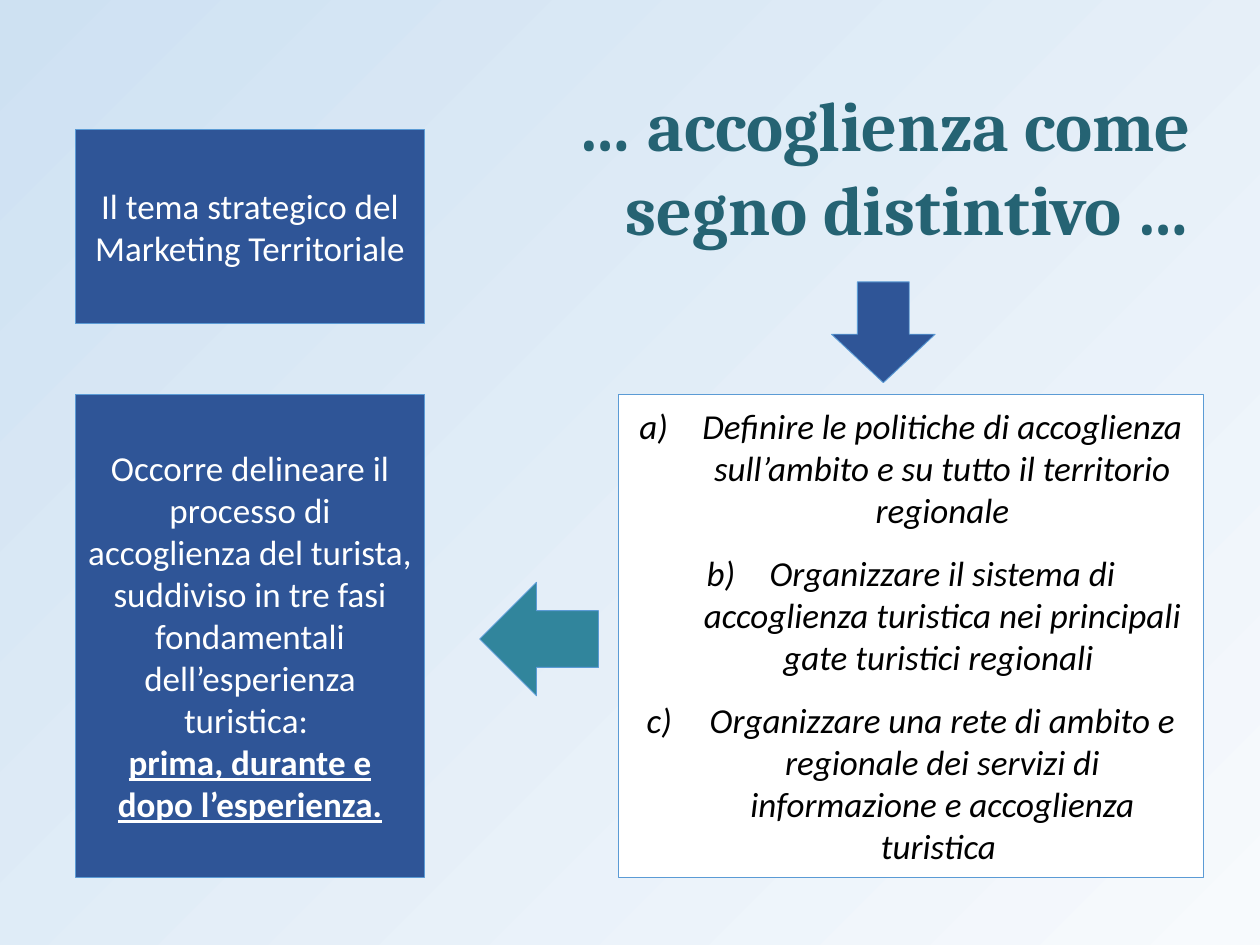
from lxml import etree
from pptx import Presentation
from pptx.dml.color import RGBColor
from pptx.enum.shapes import MSO_SHAPE
from pptx.enum.text import MSO_ANCHOR, PP_ALIGN
from pptx.oxml.ns import qn
from pptx.util import Pt

RECTANGLE = MSO_SHAPE.RECTANGLE
DOWN_ARROW = MSO_SHAPE.DOWN_ARROW
LEFT_ARROW = MSO_SHAPE.LEFT_ARROW
MIDDLE = MSO_ANCHOR.MIDDLE
CENTER = PP_ALIGN.CENTER
RIGHT = PP_ALIGN.RIGHT

COLORS = {
    "pale": "F7FAFD",
    "sky": "CEE1F2",
    "title": "256373",
    "blue": "2F5597",
    "teal": "31859C",
    "outline": "5B9BD5",
    "white": "FFFFFF",
    "black": "000000",
}

# Shared edges of the two columns and of the lower row
LEFT, LEFT_WIDTH = 43.2, 199.4
RIGHT_LEFT, RIGHT_WIDTH = 353.5, 334.1
ROW_TOP, ROW_HEIGHT = 225.4, 275.8
LIST_INDENT = 36

THEME = "Il tema strategico del Marketing Territoriale"
PROCESS = [
    "Occorre delineare il processo di accoglienza del turista, "
    "suddiviso in tre fasi fondamentali dell’esperienza turistica: ",
    "prima, durante e dopo l’esperienza.",
]
ACTIONS = [
    "Definire le politiche di accoglienza sull’ambito e su tutto il territorio regionale",
    "Organizzare il sistema di accoglienza turistica nei principali gate turistici regionali ",
    "Organizzare una rete di ambito e regionale dei servizi di informazione "
    "e accoglienza turistica ",
]


def color(name):
    return RGBColor.from_string(COLORS[name])


def set_background(slide):
    fill = slide.background.fill
    fill.gradient()
    fill.gradient_angle = 135
    for stop, name in zip(fill.gradient_stops, ("pale", "sky")):
        stop.color.rgb = color(name)


def write_text(shape, lines, size, font_name, color_name, alignment=CENTER):
    text_frame = shape.text_frame
    text_frame.word_wrap = True
    text_frame.vertical_anchor = MIDDLE
    text_frame.text = "\n".join(lines)
    for paragraph in text_frame.paragraphs:
        paragraph.alignment = alignment
        font = paragraph.runs[0].font
        font.size = Pt(size)
        font.name = font_name
        font.color.rgb = color(color_name)
    return text_frame.paragraphs


def add_title(slide, text):
    box = slide.shapes.add_textbox(Pt(286.6), Pt(19.4), Pt(401), Pt(149.8))
    paragraph = write_text(box, [text], 40, "Cambria", "title", RIGHT)[0]
    paragraph.runs[0].font.bold = True


def add_filled_shape(slide, kind, left, top, width, height, fill_name):
    shape = slide.shapes.add_shape(kind, Pt(left), Pt(top), Pt(width), Pt(height))
    shape.shadow.inherit = False
    shape.fill.solid()
    shape.fill.fore_color.rgb = color(fill_name)
    shape.line.color.rgb = color("outline")
    shape.line.width = Pt(0.5)
    return shape


def add_text_panel(slide, left, top, width, height, fill_name, lines, text_color):
    panel = add_filled_shape(slide, RECTANGLE, left, top, width, height, fill_name)
    return write_text(panel, lines, 20, "Calibri", text_color)


def make_lettered(paragraph):
    paragraph.space_before = paragraph.space_after = Pt(6)
    paragraph.runs[0].font.italic = True
    properties = paragraph._p.get_or_add_pPr()
    properties.set("marL", str(Pt(LIST_INDENT)))
    properties.set("indent", str(-Pt(LIST_INDENT)))
    numbering = etree.SubElement(properties, qn("a:buAutoNum"))
    numbering.set("type", "alphaLcParenR")


def main():
    presentation = Presentation()
    presentation.slide_width = Pt(720)
    presentation.slide_height = Pt(540)
    slide = presentation.slides.add_slide(presentation.slide_layouts[6])
    set_background(slide)

    # Title and strategic theme
    add_title(slide, "… accoglienza come segno distintivo …")
    add_text_panel(slide, LEFT, 74.2, LEFT_WIDTH, 110.9, "blue", [THEME], "white")

    # Process panel with its emphasised closing line
    process = add_text_panel(slide, LEFT, ROW_TOP, LEFT_WIDTH, ROW_HEIGHT,
                             "blue", PROCESS, "white")
    emphasis = process[-1].runs[0].font
    emphasis.bold = True
    emphasis.underline = True

    # Lettered list of actions
    actions = add_text_panel(slide, RIGHT_LEFT, ROW_TOP, RIGHT_WIDTH, ROW_HEIGHT,
                             "white", ACTIONS, "black")
    for paragraph in actions:
        make_lettered(paragraph)

    # Arrows from title to list, and from list to process
    down_arrow = add_filled_shape(slide, DOWN_ARROW, 475.2, 161.1, 59.2, 57.6, "blue")
    down_arrow.adjustments[1] = 0.48
    add_filled_shape(slide, LEFT_ARROW, 274.2, 332.8, 67.8, 64.8, "teal")

    presentation.save("out.pptx")


if __name__ == "__main__":
    main()
